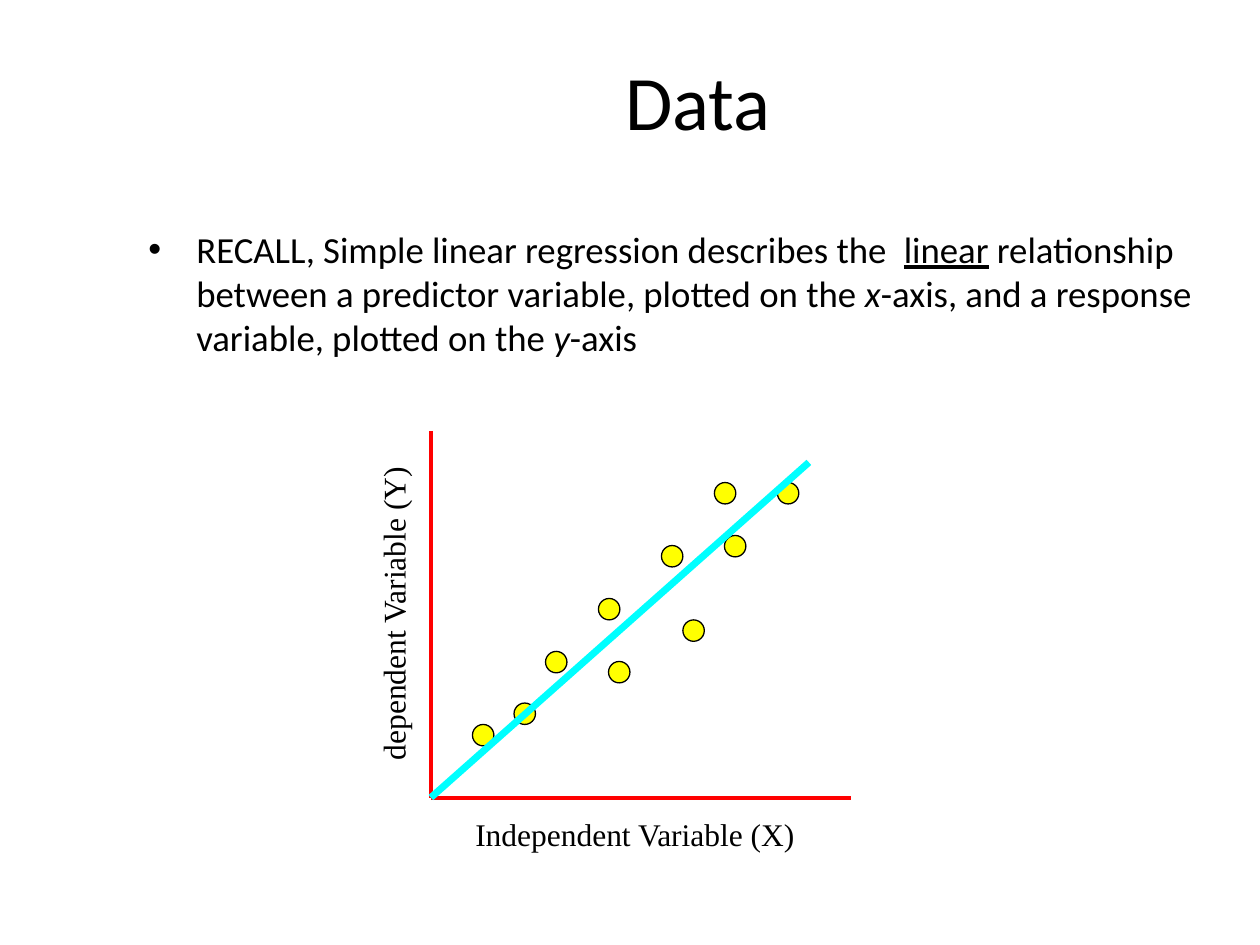
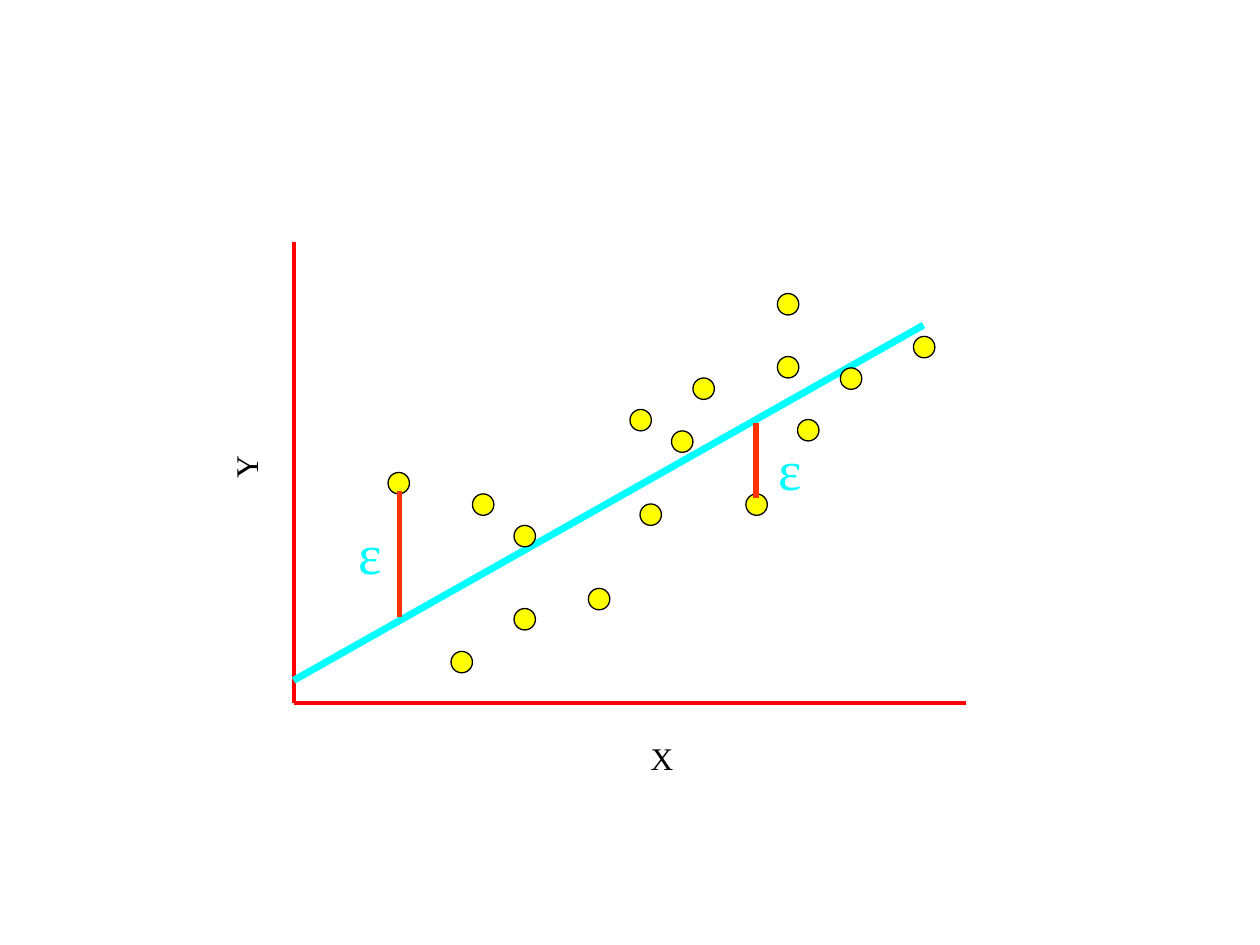
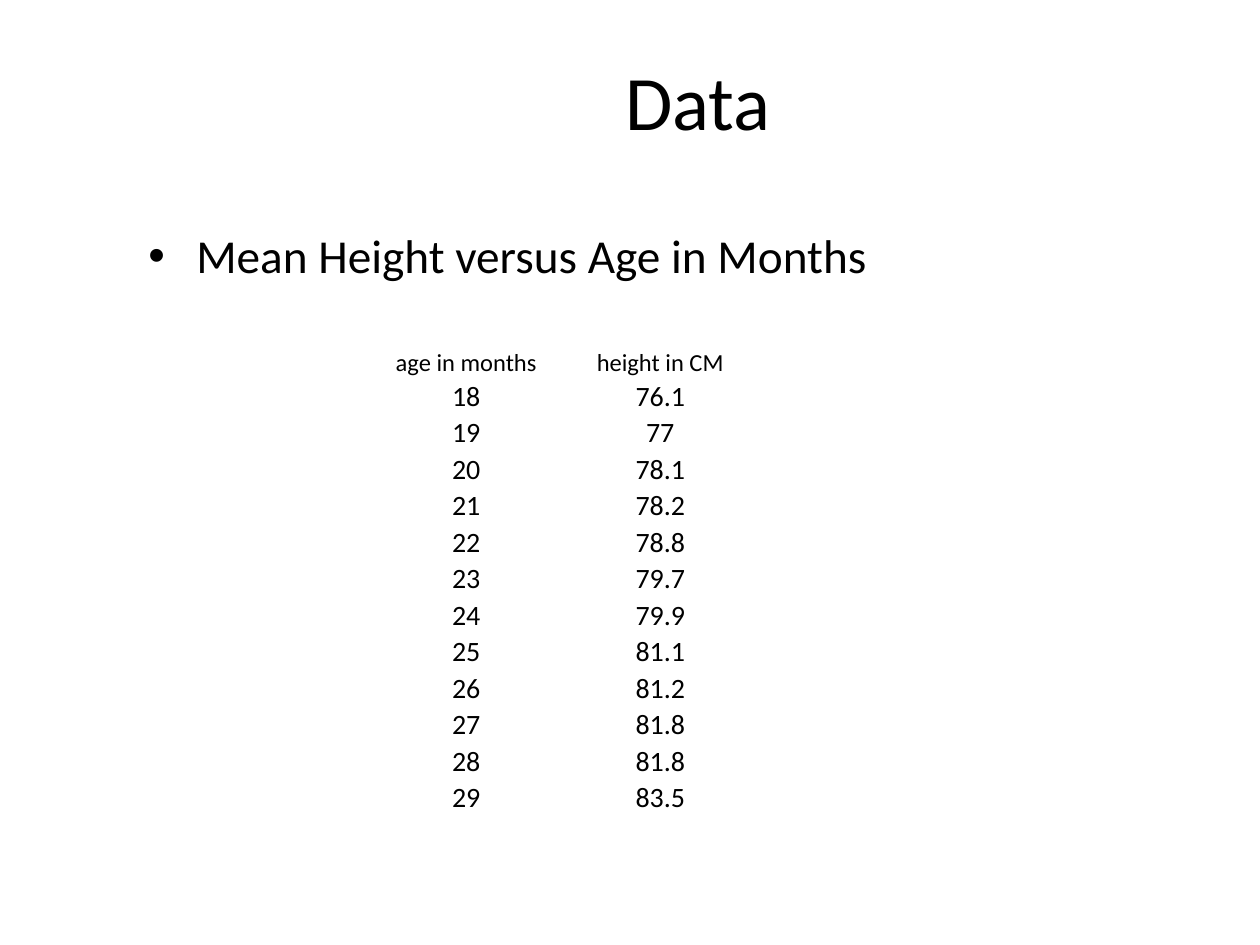
"""Build three slides that introduce linear regression and the height data."""
from lxml.etree import SubElement
from pptx import Presentation
from pptx.dml.color import RGBColor
from pptx.enum.shapes import MSO_CONNECTOR, MSO_SHAPE
from pptx.enum.text import MSO_ANCHOR, PP_ALIGN
from pptx.oxml.ns import qn
from pptx.util import Inches, Pt

BLACK, RED, ORANGE, CYAN, YELLOW = "000000", "FF0000", "FF3300", "00FFFF", "FFFF00"
SANS, SERIF = "Calibri", "Times New Roman"
DOT = 0.17
colour = RGBColor.from_string


def add_line(page, ends, shade, width):
    """Draw a straight line between two points."""
    line = page.shapes.add_connector(MSO_CONNECTOR.STRAIGHT, *map(Inches, ends))
    line.line.color.rgb = colour(shade)
    line.line.width = Pt(width)
    SubElement(line._element.spPr, qn("a:effectLst"))


def add_text(page, place, spans, size, font=SERIF, shade=BLACK, align=PP_ALIGN.CENTER, turn=0):
    """Add a one-paragraph text box made of (text, style) spans and return the paragraph."""
    box = page.shapes.add_textbox(*map(Inches, place))
    box.rotation = turn
    box.text_frame.word_wrap = True
    para = box.text_frame.paragraphs[0]
    para.alignment = align
    para.font.size, para.font.name = Pt(size), font
    para.font.color.rgb = colour(shade)
    for text, style in spans:
        span = para.add_run()
        span.text = text
        if style:
            setattr(span.font, style, True)
    return para


deck = Presentation()
deck.slide_width, deck.slide_height = Inches(10), Inches(7.5)
TITLE_ONLY, BLANK = deck.slide_layouts[5], deck.slide_layouts[6]
recall_page, error_page, table_page = [
    deck.slides.add_slide(layout) for layout in (TITLE_ONLY, BLANK, TITLE_ONLY)
]

recall_spans = [
    ("RECALL, Simple linear regression describes the  ", None),
    ("linear", "underline"),
    (" relationship  between a predictor variable, plotted on the ", None),
    ("x", "italic"),
    ("-axis, and a response variable, plotted on the ", None),
    ("y", "italic"),
    ("-axis", None),
]
height_spans = [("Mean Height versus Age in Months", None)]

for page, spans, size in ((recall_page, recall_spans, 21), (table_page, height_spans, 27)):
    title = page.shapes.title
    title.left, title.top, title.width, title.height = map(Inches, (1.08, 0.25, 8.92, 1.08))
    title.text_frame.text = "Data"
    title.text_frame.vertical_anchor = MSO_ANCHOR.MIDDLE
    heading = title.text_frame.paragraphs[0]
    heading.alignment = PP_ALIGN.CENTER
    heading.font.size, heading.font.name = Pt(44), SANS
    heading.font.color.rgb = colour(BLACK)

    bullet = add_text(page, (1.08, 1.75, 8.92, 4.92), spans, size, SANS, align=PP_ALIGN.LEFT)
    properties = bullet._p.get_or_add_pPr()
    properties.set("marL", str(Inches(0.38)))
    properties.set("indent", str(-Inches(0.38)))
    spacing = SubElement(properties, qn("a:spcBef"))
    SubElement(spacing, qn("a:spcPct"), val="20000")
    SubElement(properties, qn("a:buFont"), typeface="Arial")
    SubElement(properties, qn("a:buChar"), char="•")
    properties.append(properties.find(qn("a:defRPr")))

recall_dots = [
    (6.17, 3.83), (5.25, 4.33), (4.75, 4.75), (3.75, 5.75), (5.75, 4.25),
    (4.83, 5.25), (4.33, 5.17), (4.08, 5.58), (5.67, 3.83), (5.42, 4.92),
]
error_dots = [
    (3.08, 3.75), (3.58, 5.17), (4.08, 4.83), (4.67, 4.67), (7.25, 2.67), (3.75, 3.92),
    (5.08, 4), (5, 3.25), (5.33, 3.42), (5.5, 3), (5.92, 3.92), (6.33, 3.33),
    (6.17, 2.83), (6.17, 2.33), (6.67, 2.92), (4.08, 4.17),
]
recall_labels = [
    ("Independent Variable (X)", (3.33, 6.42, 3.42, 0.4), 0),
    ("dependent Variable (Y)", (1.58, 4.67, 3.08, 0.4), 270),
]
error_labels = [("X", (4.17, 5.82, 2.17, 0.4), 0), ("Y", (0.41, 3.51, 3.08, 0.4), 270)]
recall_fit, error_fit = (3.42, 6.33, 6.42, 3.67), (2.33, 5.4, 7.33, 2.58)

for page, (left, top, right, bottom), labels, dots, fit, fit_on_top in (
    (recall_page, (3.42, 3.42, 6.75, 6.33), recall_labels, recall_dots, recall_fit, True),
    (error_page, (2.33, 1.92, 7.67, 5.58), error_labels, error_dots, error_fit, False),
):
    add_line(page, (left, top, left, bottom), RED, 2.25)
    add_line(page, (left, bottom, right, bottom), RED, 2.25)
    for text, place, turn in labels:
        add_text(page, place, [(text, None)], 18, turn=turn)
    if not fit_on_top:
        add_line(page, fit, CYAN, 4)
    for x, y in dots:
        dot = page.shapes.add_shape(MSO_SHAPE.OVAL, *map(Inches, (x, y, DOT, DOT)))
        dot.shadow.inherit = False
        dot.fill.solid()
        dot.fill.fore_color.rgb = colour(YELLOW)
        dot.line.color.rgb = colour(BLACK)
        dot.line.width = Pt(0.75)
    if fit_on_top:
        add_line(page, fit, CYAN, 4)

for residual, place in (
    ((6, 3.36, 6, 3.95), (6.08, 3.4, 0.33, 0.75)),
    ((3.17, 3.9, 3.17, 4.9), (2.75, 4.07, 0.33, 0.67)),
):
    add_line(error_page, residual, ORANGE, 3)
    add_text(error_page, place, [("ε", None)], 32, shade=CYAN, align=PP_ALIGN.LEFT)

heights = [76.1, 77, 78.1, 78.2, 78.8, 79.7, 79.9, 81.1, 81.2, 81.8, 81.8, 83.5]
rows = [("age in months", "height in CM"), *enumerate(heights, start=18)]
frame = table_page.shapes.add_table(len(rows), 2, *map(Inches, (3, 2.75, 3.08, 3.57)))
table = frame.table
table.first_row = table.horz_banding = False
table.columns[0].width, table.columns[1].width = Inches(1.4), Inches(1.68)
for row_number, values in enumerate(rows):
    table.rows[row_number].height = Inches(0.29 if row_number else 0.09)
    for column_number, value in enumerate(values):
        cell = table.cell(row_number, column_number)
        cell.fill.background()
        cell.vertical_anchor = MSO_ANCHOR.BOTTOM
        cell.margin_left = cell.margin_right = cell.margin_top = Inches(0.01)
        cell.margin_bottom = 0
        cell.text = str(value)
        para = cell.text_frame.paragraphs[0]
        para.alignment = PP_ALIGN.CENTER
        para.font.size, para.font.name = Pt(16 if row_number else 14), SANS
        para.font.color.rgb = colour(BLACK)

deck.save("out.pptx")
